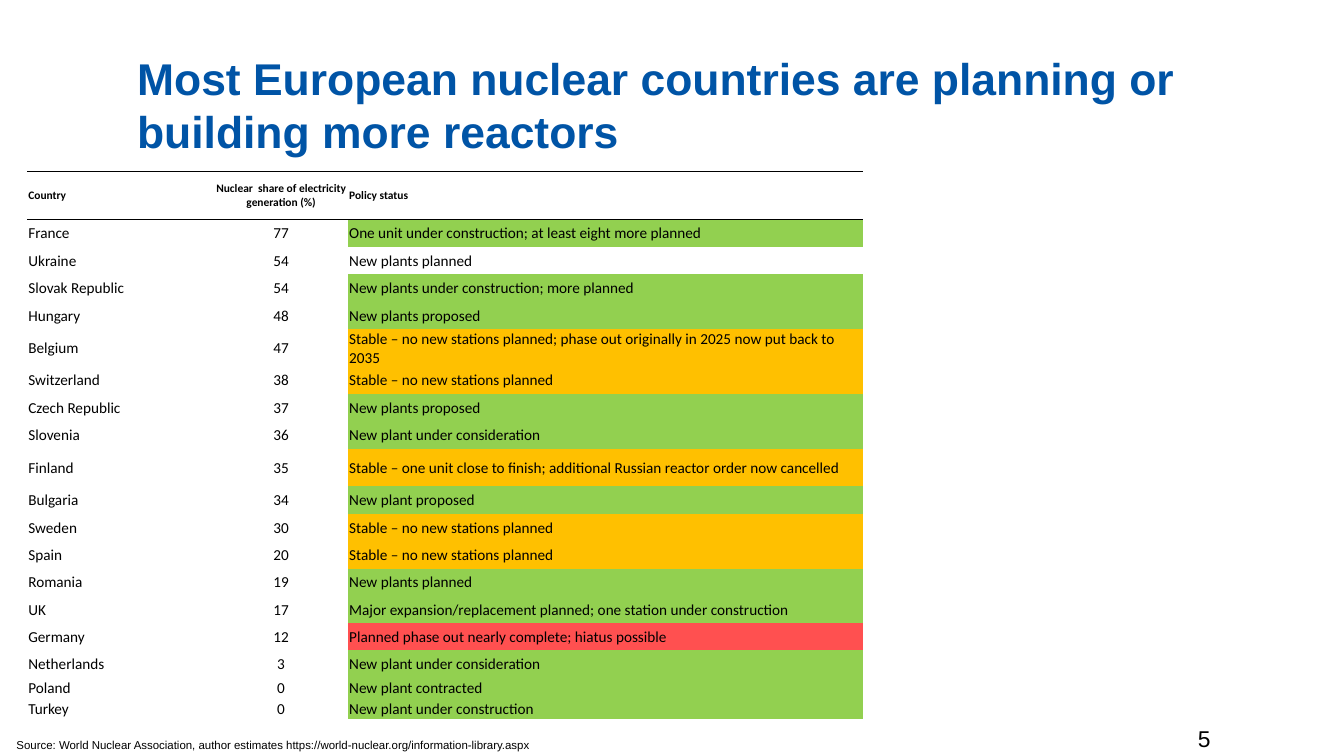
from lxml.etree import SubElement
from pptx import Presentation
from pptx.dml.color import RGBColor
from pptx.enum.text import MSO_ANCHOR, PP_ALIGN
from pptx.oxml.ns import qn
from pptx.util import Inches, Pt

BLACK, WHITE, BLUE = "000000", "FFFFFF", "0054A6"
GROWING, STABLE, CLOSING = "92D050", "FFC000", "FF5050"
PLAIN_TABLE_STYLE = "{2D5ABB26-0587-4C30-8999-92F81FD0307C}"

TITLE = "Most European nuclear countries are planning or building more reactors"
SOURCE = ("Source: World Nuclear Association, author estimates "
          "https://world-nuclear.org/information-library.aspx")
PAGE_NUMBER = "5"

HEADINGS = ("Country", "Nuclear  share of electricity generation (%)", "Policy status")
COUNTRIES = [
    ("France", 77, "One unit under construction; at least eight more planned", GROWING),
    ("Ukraine", 54, "New plants planned", WHITE),
    ("Slovak Republic", 54, "New plants under construction; more planned", GROWING),
    ("Hungary", 48, "New plants proposed", GROWING),
    ("Belgium", 47, "Stable – no new stations planned; phase out originally in 2025 "
                    "now put back to 2035", STABLE),
    ("Switzerland", 38, "Stable – no new stations planned", STABLE),
    ("Czech Republic", 37, "New plants proposed", GROWING),
    ("Slovenia", 36, "New plant under consideration", GROWING),
    ("Finland", 35, "Stable – one unit close to finish; additional Russian reactor "
                    "order now cancelled", STABLE),
    ("Bulgaria", 34, "New plant proposed", GROWING),
    ("Sweden", 30, "Stable – no new stations planned", STABLE),
    ("Spain", 20, "Stable – no new stations planned", STABLE),
    ("Romania", 19, "New plants planned", GROWING),
    ("UK", 17, "Major expansion/replacement planned; one station under construction", GROWING),
    ("Germany", 12, "Planned phase out nearly complete; hiatus possible", CLOSING),
    ("Netherlands", 3, "New plant under consideration", GROWING),
    ("Poland", 0, "New plant contracted", GROWING),
    ("Turkey", 0, "New plant under construction", GROWING),
]
COLUMN_WIDTHS = (2.04, 1.47, 5.63)
HEADER_HEIGHT, ROW_HEIGHT = 0.53, 0.3
SPECIAL_HEIGHTS = {"Belgium": 0.41, "Finland": 0.41, "Germany": 0.29,
                   "Poland": 0.23, "Turkey": 0.23}


def color(hex_code):
    return RGBColor.from_string(hex_code)


def write(frame, text, size, font="Arial", ink=BLACK, bold=False, align=PP_ALIGN.LEFT):
    frame.text = text
    paragraph = frame.paragraphs[0]
    paragraph.alignment = align
    style = paragraph.runs[0].font
    style.name, style.size, style.bold = font, Pt(size), bold
    style.color.rgb = color(ink)


def add_label(slide, text, left, top, width, height, wrap=True, **style):
    frame = slide.shapes.add_textbox(*map(Inches, (left, top, width, height))).text_frame
    frame.word_wrap = wrap
    frame.margin_left = frame.margin_right = Inches(0.13)
    frame.margin_top = frame.margin_bottom = Inches(0.07)
    write(frame, text, **style)


def rule_cell(cell):
    """Draw thin black borders above and below the cell."""
    properties = cell._tc.get_or_add_tcPr()
    for position, side in enumerate(("lnT", "lnB")):
        line = SubElement(properties, qn(f"a:{side}"), w=str(Pt(0.5)))
        fill = SubElement(line, qn("a:solidFill"))
        SubElement(fill, qn("a:srgbClr"), val=BLACK)
        properties.insert(position, line)


def fill_row(cells, texts, status_fill, **style):
    fills = (WHITE, WHITE, status_fill)
    aligns = (PP_ALIGN.LEFT, PP_ALIGN.CENTER, PP_ALIGN.LEFT)
    for cell, text, fill, align in zip(cells, texts, fills, aligns):
        cell.margin_left = cell.margin_right = cell.margin_top = Inches(0.01)
        cell.margin_bottom = 0
        cell.vertical_anchor = MSO_ANCHOR.MIDDLE
        cell.fill.solid()
        cell.fill.fore_color.rgb = color(fill)
        write(cell.text_frame, str(text), font="Calibri", align=align, **style)


def add_policy_table(slide, left, top):
    heights = [HEADER_HEIGHT] + [SPECIAL_HEIGHTS.get(country[0], ROW_HEIGHT)
                                 for country in COUNTRIES]
    table = slide.shapes.add_table(
        len(heights), len(COLUMN_WIDTHS), Inches(left), Inches(top),
        Inches(sum(COLUMN_WIDTHS)), Inches(sum(heights))).table
    table.first_row = table.horz_banding = False
    table._tbl.tblPr.find(qn("a:tableStyleId")).text = PLAIN_TABLE_STYLE
    for column, width in zip(table.columns, COLUMN_WIDTHS):
        column.width = Inches(width)
    for row, height in zip(table.rows, heights):
        row.height = Inches(height)

    header, *body = table.rows
    fill_row(header.cells, HEADINGS, WHITE, size=9, bold=True)
    for cell in header.cells:
        rule_cell(cell)
    for row, (*texts, status_fill) in zip(body, COUNTRIES):
        fill_row(row.cells, texts, status_fill, size=12)


def main():
    deck = Presentation()
    deck.slide_width, deck.slide_height = Inches(14.7), Inches(8.27)
    slide = deck.slides.add_slide(deck.slide_layouts[6])
    add_label(slide, TITLE, 1.37, 0.49, 11.97, 0.78, size=35, ink=BLUE, bold=True)
    add_label(slide, PAGE_NUMBER, 9.94, 7.86, 3.43, 0.28, size=18, align=PP_ALIGN.RIGHT)
    add_label(slide, SOURCE, 0.05, 8, 5.95, 0.28, wrap=False, size=9)
    add_policy_table(slide, 0.3, 1.87)
    deck.save("out.pptx")


if __name__ == "__main__":
    main()
